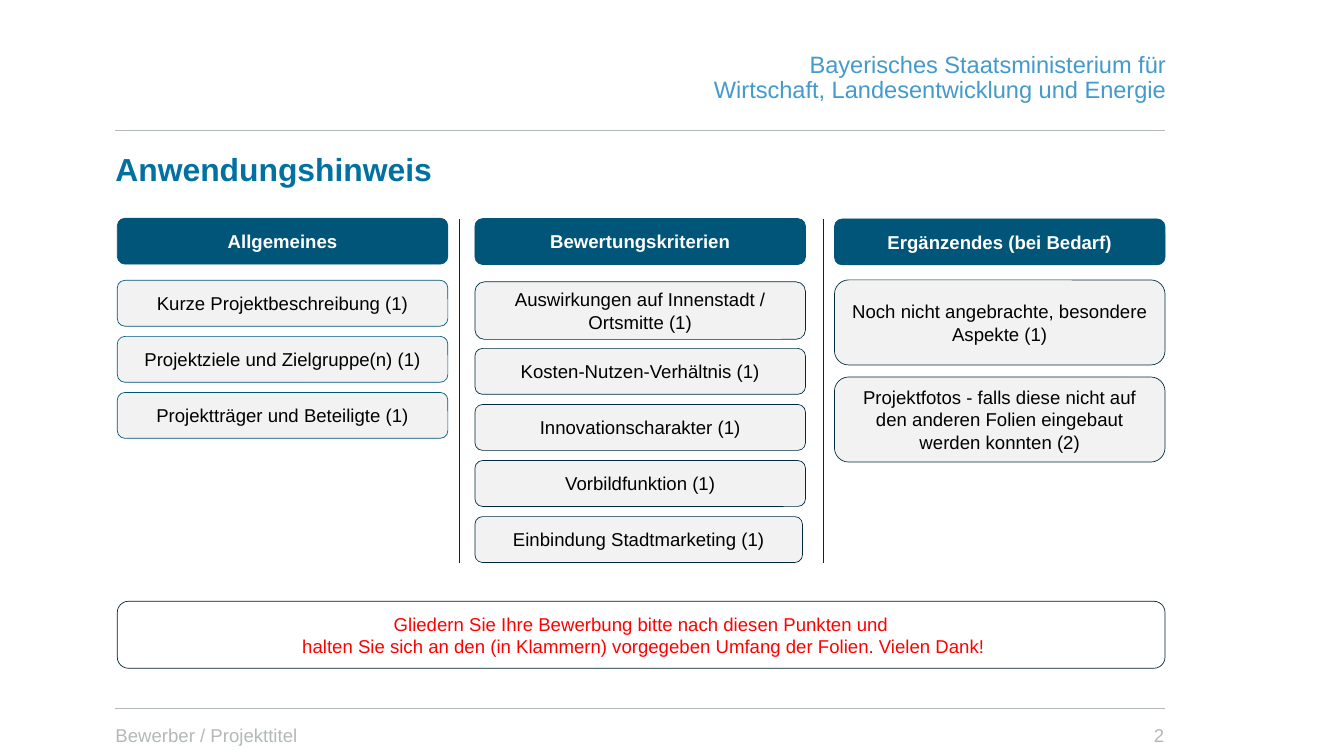
from dataclasses import dataclass

from lxml.etree import SubElement
from pptx import Presentation
from pptx.dml.color import RGBColor
from pptx.enum.shapes import MSO_CONNECTOR, MSO_SHAPE
from pptx.enum.text import MSO_ANCHOR, PP_ALIGN
from pptx.oxml.ns import qn
from pptx.util import Cm, Inches, Pt


@dataclass(frozen=True)
class Theme:
    font: str = "Arial"
    ministry: str = "439ACB"
    title: str = "0071A1"
    header: str = "005579"
    item: str = "F2F2F2"
    outline: str = "002A3C"
    notice_outline: str = "001F2C"
    divider: str = "00293B"
    muted: str = "B3B8B9"
    notice: str = "FF0000"
    white: str = "FFFFFF"
    black: str = "000000"
    body_size: float = 14
    ministry_size: float = 17.8
    title_size: float = 24
    thin: float = 0.5
    rule: float = 0.75


theme = Theme()


def write(frame, text, color, size=theme.body_size, align=PP_ALIGN.LEFT,
          bold=False, anchor=MSO_ANCHOR.TOP, inset=True, spacing=None):
    frame.word_wrap = True
    frame.vertical_anchor = anchor
    if not inset:
        frame.margin_left = frame.margin_right = 0
        frame.margin_top = frame.margin_bottom = 0
    frame.text = text
    for paragraph in frame.paragraphs:
        paragraph.alignment = align
        paragraph.line_spacing = spacing
        paragraph.font.name = theme.font
        paragraph.font.size = Pt(size)
        paragraph.font.bold = bold
        paragraph.font.color.rgb = RGBColor.from_string(color)


def add_card(text, left, top, width, height, fill, outline, color, bold=False):
    card = slide.shapes.add_shape(
        MSO_SHAPE.ROUNDED_RECTANGLE, Cm(left), Cm(top), Cm(width), Cm(height))
    card.shadow.inherit = False
    card.fill.solid()
    card.fill.fore_color.rgb = RGBColor.from_string(fill)
    card.line.color.rgb = RGBColor.from_string(outline)
    card.line.width = Pt(theme.thin)
    write(card.text_frame, text, color, align=PP_ALIGN.CENTER, bold=bold,
          anchor=MSO_ANCHOR.MIDDLE)


presentation = Presentation()
presentation.slide_width = Inches(14.07)
presentation.slide_height = Inches(7.91)
slide = presentation.slides.add_slide(presentation.slide_layouts[6])

margin_left, margin_right = 3.07, 30.99
card_width, card_height = 8.79, 1.22

ministry = slide.shapes.add_textbox(Cm(17.8), Cm(1.4), Cm(13.2), Cm(1.34))
write(ministry.text_frame,
      "Bayerisches Staatsministerium für\nWirtschaft, Landesentwicklung und Energie",
      theme.ministry, theme.ministry_size, PP_ALIGN.RIGHT,
      anchor=MSO_ANCHOR.BOTTOM, inset=False, spacing=Pt(19))

title = slide.shapes.add_textbox(Cm(margin_left), Cm(3.99), Cm(27.92), Cm(1.32))
write(title.text_frame, "Anwendungshinweis", theme.title, theme.title_size,
      bold=True, inset=False)

applicant = slide.shapes.add_textbox(Cm(margin_left), Cm(19.23), Cm(24.92), Cm(0.51))
write(applicant.text_frame, "Bewerber / Projekttitel", theme.muted, inset=False)

page_number = slide.shapes.add_textbox(Cm(28.88), Cm(19.23), Cm(2.08), Cm(0.51))
write(page_number.text_frame, "2", theme.muted, align=PP_ALIGN.RIGHT, inset=False)

lines = [
    (margin_left, 3.48, margin_right, 3.48, theme.muted, theme.rule),
    (margin_left, 18.83, margin_right, 18.83, theme.muted, theme.rule),
    (12.22, 5.82, 12.22, 14.95, theme.divider, theme.thin),
    (21.89, 5.82, 21.89, 14.95, theme.divider, theme.thin),
]
for x1, y1, x2, y2, color, weight in lines:
    line = slide.shapes.add_connector(
        MSO_CONNECTOR.STRAIGHT, Cm(x1), Cm(y1), Cm(x2), Cm(y2))
    line.line.color.rgb = RGBColor.from_string(color)
    line.line.width = Pt(weight)
    SubElement(line.element.spPr, qn("a:effectLst"))

columns = [
    ("Allgemeines", 3.12, 5.8, 7.45, 1.49, card_height, theme.header,
     ["Kurze Projektbeschreibung (1)",
      "Projektziele und Zielgruppe(n) (1)",
      "Projektträger und Beteiligte (1)"]),
    ("Bewertungskriterien", 12.63, 5.81, 9.26, 1.49, card_height, theme.outline,
     ["Kosten-Nutzen-Verhältnis (1)",
      "Innovationscharakter (1)",
      "Vorbildfunktion (1)"]),
    ("Ergänzendes (bei Bedarf)", 22.19, 5.82, 7.44, 2.58, 2.26, theme.outline,
     ["Noch nicht angebrachte, besondere Aspekte (1)",
      "Projektfotos - falls diese nicht auf den anderen Folien eingebaut "
      "werden konnten (2)"]),
]
for heading, left, heading_top, first_top, pitch, height, outline, items in columns:
    add_card(heading, left, heading_top, card_width, card_height,
             theme.header, theme.header, theme.white, bold=True)
    for row, item in enumerate(items):
        add_card(item, left, first_top + row * pitch, card_width, height,
                 theme.item, outline, theme.black)

add_card("Auswirkungen auf Innenstadt / Ortsmitte (1)", 12.63, 7.49, card_width, 1.53,
         theme.item, theme.outline, theme.black)
add_card("Einbindung Stadtmarketing (1)", 12.63, 13.73, 8.71, card_height,
         theme.item, theme.outline, theme.black)

add_card("Gliedern Sie Ihre Bewerbung bitte nach diesen Punkten und\v"
         " halten Sie sich an den (in Klammern) vorgegeben Umfang der Folien. Vielen Dank!",
         3.12, 15.98, 27.86, 1.78, theme.white, theme.notice_outline, theme.notice)

presentation.save("out.pptx")
